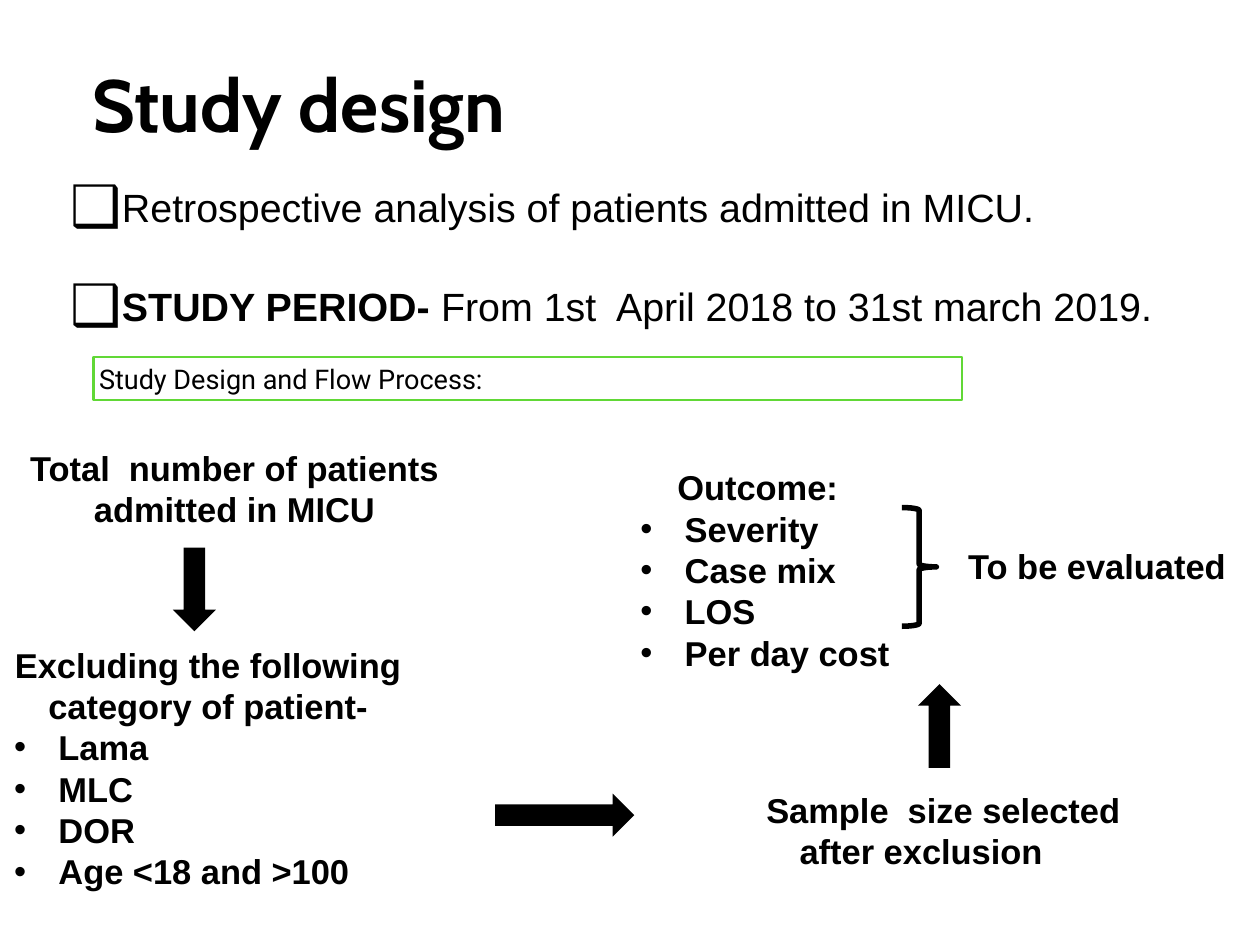
from lxml.etree import SubElement
from pptx import Presentation
from pptx.dml.color import RGBColor
from pptx.enum.shapes import MSO_SHAPE
from pptx.enum.text import MSO_ANCHOR, MSO_AUTO_SIZE, PP_ALIGN
from pptx.oxml.ns import qn
from pptx.util import Pt

BLACK = RGBColor(0, 0, 0)
WHITE = RGBColor(255, 255, 255)
GREEN = RGBColor(0x61, 0xD8, 0x36)
LEFT, MID = PP_ALIGN.LEFT, PP_ALIGN.CENTER

# Content: places are left, top, width, height in points
TITLE = "Study design"
TITLE_BOX = (30, 38, 426, 92)
POINTS = [
    [("Retrospective analysis of patients admitted in MICU.", False)],
    [("STUDY PERIOD- ", True),
     ("From 1st  April 2018 to 31st march 2019.", False)],
]
BODY_BOX = (53, 128, 960, 161)
BANNER = "Study Design and Flow Process:"
BANNER_BOX = (76, 290, 706, 35)

# Flow steps: place, heading, alignment, first-line indent, bullets
STEPS = [
    ((14, 357, 353, 80), "Total  number of patients admitted in MICU",
     MID, 0, []),
    ((7, 519, 324, 210), "Excluding the following category of patient-",
     MID, 0, ["Lama", "MLC", "DOR", "Age <18 and >100"]),
    ((567, 635, 363, 80), "Sample  size selected after exclusion",
     MID, 36, []),
    ((516, 374, 294, 178), "Outcome:",
     LEFT, 30, ["Severity", "Case mix", "LOS", "Per day cost"]),
    ((761, 439, 261, 42), "To be evaluated", MID, 0, []),
]
ARROWS = [
    (MSO_SHAPE.DOWN_ARROW, (140.5, 445, 35, 68)),
    (MSO_SHAPE.RIGHT_ARROW, (402.5, 645, 113, 35)),
    (MSO_SHAPE.UP_ARROW, (746, 556, 35, 68)),
]
BRACE_BOX = (733, 412.5, 28, 96.5)


def place(shape, box):
    shape.left, shape.top, shape.width, shape.height = map(Pt, box)


def set_up(frame):
    frame.word_wrap = True
    frame.auto_size = MSO_AUTO_SIZE.NONE
    frame.vertical_anchor = MSO_ANCHOR.MIDDLE
    frame.margin_left = frame.margin_right = Pt(4.5)
    frame.margin_top = frame.margin_bottom = Pt(4.5)


def style(para, size, face="Arial", bold=True, align=LEFT):
    para.alignment = align
    for run in para.runs:
        font = run.font
        font.size, font.name, font.bold = Pt(size), face, bold
        font.color.rgb = BLACK


def indent(para, margin, first):
    props = para._p.get_or_add_pPr()
    props.set("marL", str(Pt(margin)))
    props.set("indent", str(Pt(first)))
    return props


def bullet(para, sign, hang, scale=100):
    props = indent(para, hang, -hang)
    SubElement(props, qn("a:buSzPct"), val=str(scale * 1000))
    SubElement(props, qn("a:buFont"), typeface="Arial")
    SubElement(props, qn("a:buChar"), char=sign)


def add_shape(kind, box, fill=None, line=None, width=0):
    shape = slide.shapes.add_shape(kind, *map(Pt, box))
    shape.shadow.inherit = False
    if fill is None:
        shape.fill.background()
    else:
        shape.fill.solid()
        shape.fill.fore_color.rgb = fill
    if line is None:
        shape.line.fill.background()
    else:
        shape.line.color.rgb = line
        shape.line.width = Pt(width)
    return shape


deck = Presentation()
deck.slide_width, deck.slide_height = Pt(1024), Pt(768)
slide = deck.slides.add_slide(deck.slide_layouts[1])

# Title
title = slide.shapes.title
place(title, TITLE_BOX)
set_up(title.text_frame)
title.text_frame.text = TITLE
style(title.text_frame.paragraphs[0], 60, "Cabin", align=MID)

# Study facts
body = slide.placeholders[1]
place(body, BODY_BOX)
frame = body.text_frame
set_up(frame)
for i, parts in enumerate(POINTS):
    para = frame.add_paragraph() if i else frame.paragraphs[0]
    for text, _ in parts:
        para.add_run().text = text
    style(para, 32)
    for run, (_, bold) in zip(para.runs, parts):
        run.font.bold = bold
    para.space_before = Pt(42)
    bullet(para, "❑", 35, 145)

# Flow steps
for box, head, align, first, items in STEPS:
    frame = slide.shapes.add_textbox(*map(Pt, box)).text_frame
    set_up(frame)
    frame.text = "\n".join([head] + items)
    top, *rest = frame.paragraphs
    style(top, 28, align=align)
    indent(top, 0, first)
    for para in rest:
        style(para, 28)
        bullet(para, "•", 36)

# Arrows and brace
for kind, box in ARROWS:
    add_shape(kind, box, fill=BLACK)
add_shape(MSO_SHAPE.RIGHT_BRACE, BRACE_BOX, line=BLACK, width=4.5)

# Banner
banner = add_shape(MSO_SHAPE.RECTANGLE, BANNER_BOX, WHITE, GREEN, 2)
set_up(banner.text_frame)
banner.text_frame.text = BANNER
style(banner.text_frame.paragraphs[0], 22, "Roboto", False)

deck.save("out.pptx")
